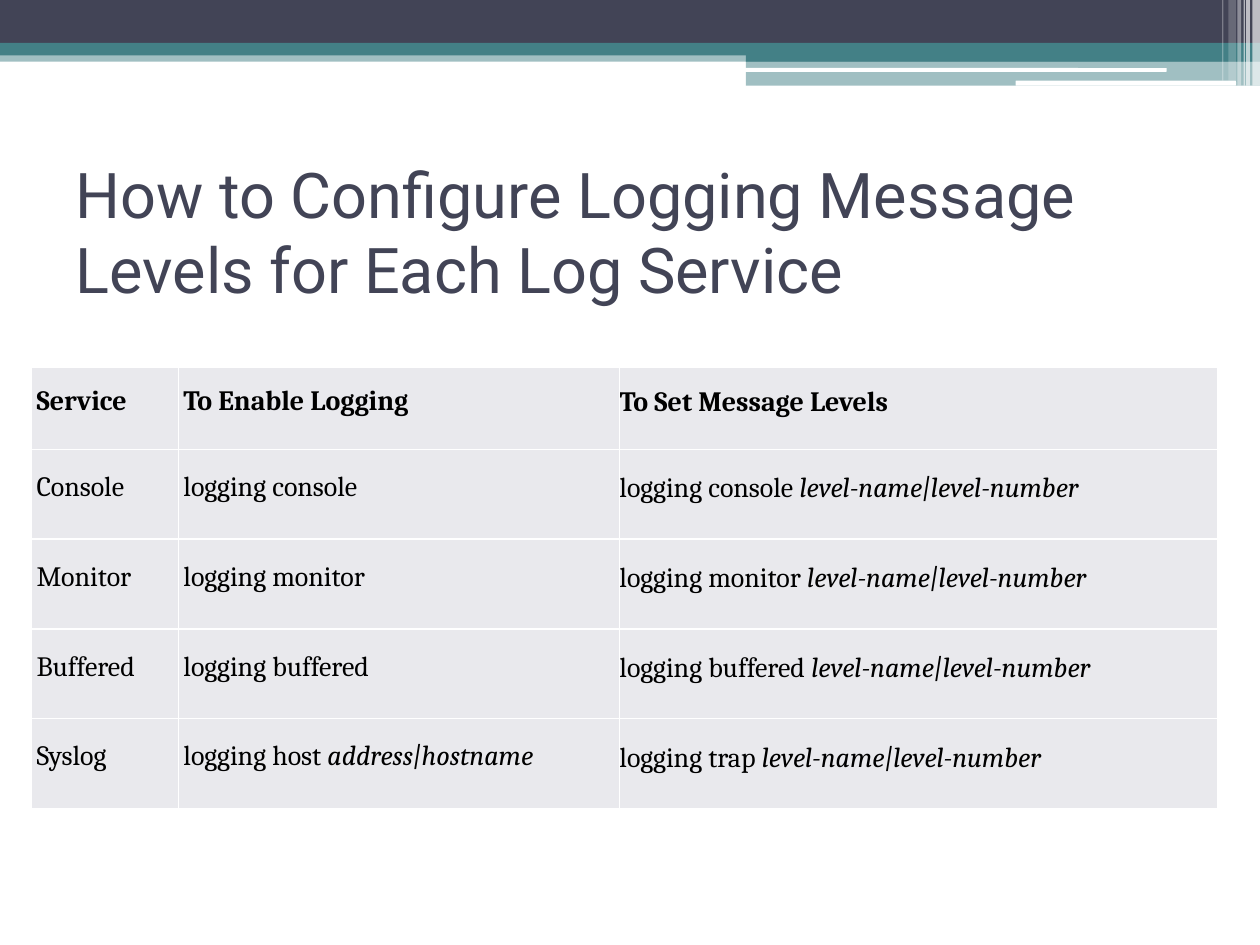
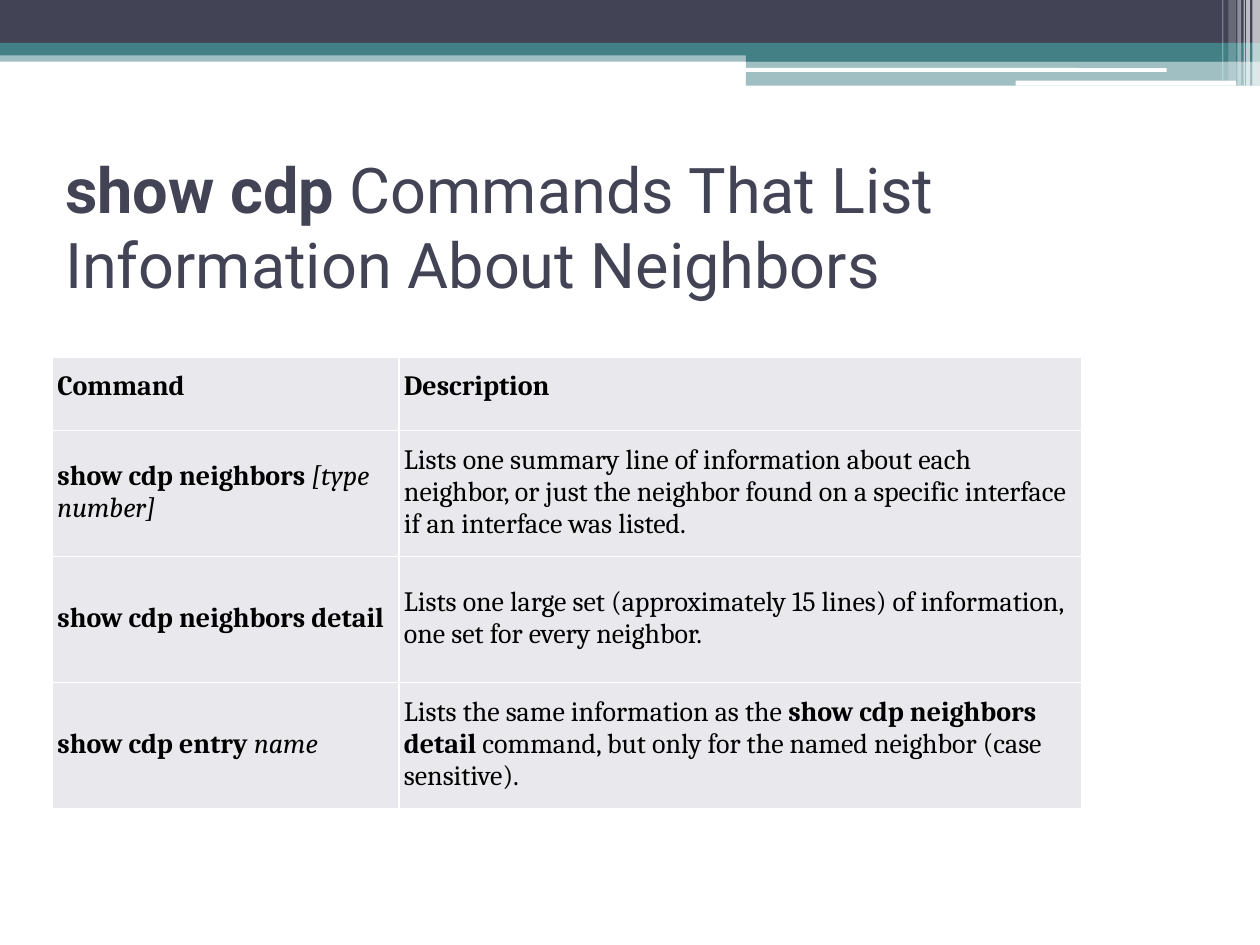
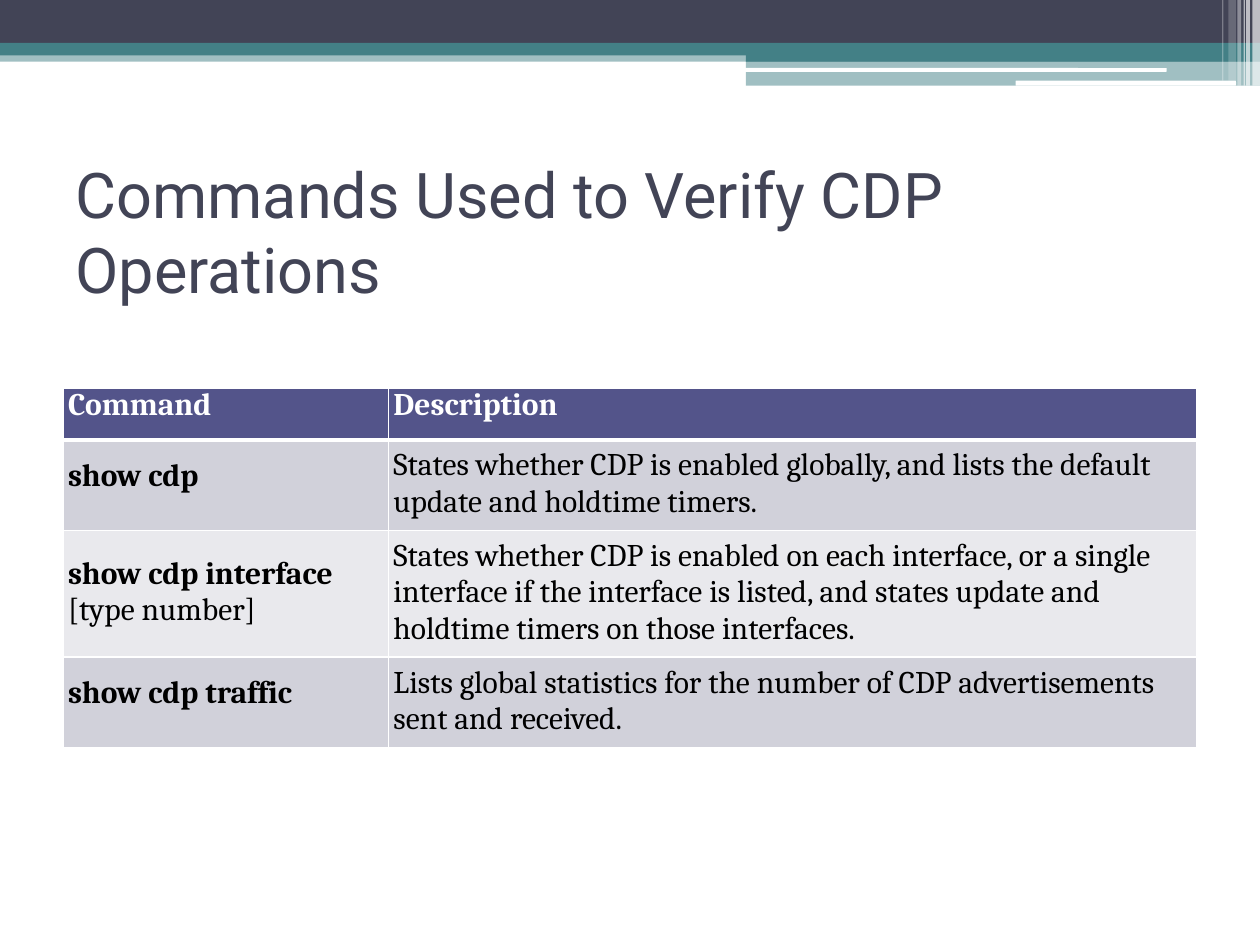
from itertools import product

from lxml import etree
from pptx import Presentation
from pptx import util as u
from pptx.dml.color import RGBColor
from pptx.enum import shapes, text
from pptx.oxml.ns import qn

COLORS = {
    "ink": "424456",
    "teal": "438086",
    "white": "FFFFFF",
    "black": "000000",
    "header": "53548A",
    "light": "E9E9ED",
    "dark": "D1D1DA",
}
GRID = u.Inches(1) / 12

RECT = shapes.MSO_SHAPE.RECTANGLE
ROUND = shapes.MSO_SHAPE.ROUNDED_RECTANGLE
BANDS = [
    (RECT, 0, 0.4, 10, 0.09, "teal", 50),
    (RECT, 0, 0, 10, 0.34, "ink", 100),
    (RECT, 0, 0.34, 10, 0.1, "teal", 100),
    (RECT, 5.92, 0.39, 4.08, 0.1, "teal", 100),
    (RECT, 5.92, 0.48, 4.08, 0.2, "teal", 50),
    (ROUND, 5.91, 0.54, 3.35, 0.03, "white", 100),
    (ROUND, 8.06, 0.64, 1.75, 0.04, "white", 100),
]
STRIPES = [
    (9.94, 0.06, 0.68, 65),
    (9.89, 0.03, 0.68, 65),
    (9.87, 0.01, 0.68, 60),
    (9.82, 0.03, 0.68, 40),
    (9.75, 0.06, 0.64, 20),
    (9.7, 0.01, 0.64, 30),
]


def rgb(name):
    return RGBColor.from_string(COLORS[name])


def cells(n):
    return u.Emu(round(n * GRID))


def bold(words):
    return words, "b"


def italic(words):
    return words, "i"


def add_band(s, kind, left, top, width, height, color, alpha):
    sp = s.shapes.add_shape(kind, *map(u.Inches, (left, top, width, height)))
    sp.shadow.inherit = False
    sp.fill.solid()
    sp.fill.fore_color.rgb = rgb(color)
    sp.line.fill.background()
    if alpha < 100:
        clr = sp.element.spPr.find(qn("a:solidFill"))[0]
        etree.SubElement(clr, qn("a:alpha")).set("val", str(alpha * 1000))
    return sp


def decorate_master(prs, s):
    stripes = [(RECT, x, 0, w, h, "white", a) for x, w, h, a in STRIPES]
    tree = prs.slide_master.shapes.element
    for i, band in enumerate(BANDS + stripes):
        sp = add_band(s, *band)
        sp.element.nvSpPr.cNvPr.set("id", str(100 + i))
        tree.insert(2 + i, sp.element)


def write_runs(p, runs, size, font, color):
    p.font.size = u.Pt(size)
    p.font.name = font
    p.font.color.rgb = rgb(color)
    parts = [(part, "") if isinstance(part, str) else part for part in runs]
    styles = {style for _, style in parts}
    for words, style in parts:
        r = p.add_run()
        r.text = words
        target = p.font if len(styles) == 1 else r.font
        target.bold = style == "b"
        target.italic = style == "i"


def add_title(s, box, *runs):
    title = s.shapes.title
    title.left, title.top, title.width, title.height = map(cells, box)
    tf = title.text_frame
    tf.auto_size = text.MSO_AUTO_SIZE.NONE
    tf.vertical_anchor = text.MSO_ANCHOR.MIDDLE
    p = tf.paragraphs[0]
    p.alignment = text.PP_ALIGN.LEFT
    write_runs(p, runs, 36, "Roboto", "ink")


def set_borders(cell, bottom):
    tcPr = cell._tc.get_or_add_tcPr()
    for side, width in (("L", 1), ("R", 1), ("T", 1), ("B", bottom)):
        ln = etree.SubElement(tcPr, qn("a:ln" + side), w=str(u.Pt(width)))
        fill = etree.SubElement(ln, qn("a:solidFill"))
        etree.SubElement(fill, qn("a:srgbClr"), val=COLORS["white"])


def add_grid(s, corner, widths, heights, rows, size=16, tight=(), flush=None, banded=False):
    left, top = map(cells, corner)
    frame = s.shapes.add_table(len(rows), len(widths), left, top,
                               cells(sum(widths)), cells(sum(heights)))
    table = frame.table
    table.first_row = banded
    table.horz_banding = False
    for column, width in zip(table.columns, widths):
        column.width = cells(width)
    for row, height in zip(table.rows, heights):
        row.height = cells(height)
    for i, j in product(range(len(rows)), range(len(widths))):
        cell = table.cell(i, j)
        head = i == 0
        set_borders(cell, 3 if banded and head else 1)
        fill = "light"
        if banded:
            fill = "header" if head else ("light", "dark")[i % 2]
        cell.fill.solid()
        cell.fill.fore_color.rgb = rgb(fill)
        cell.vertical_anchor = text.MSO_ANCHOR.MIDDLE
        margins = (0,) * 4 if j == flush else (0.04, 0.06, 0.04, 0.07 if head else 0.08)
        (cell.margin_left, cell.margin_top,
         cell.margin_right, cell.margin_bottom) = map(u.Inches, margins)
        p = cell.text_frame.paragraphs[0]
        p.space_before = u.Pt(2 if head else 3)
        p.space_after = u.Pt(2 if head else 6 if j == flush else 0)
        if head:
            p.line_spacing = u.Pt(11)
        elif (i, j) in tight:
            p.line_spacing = u.Pt(12)
        runs = [bold(rows[i][j])] if head else rows[i][j]
        write_runs(p, runs, size, "Cambria", "white" if banded and head else "black")


def add_logging_slide(s):
    add_title(s, (6, 15, 108, 14),
              "How to Configure Logging Message Levels for Each Log Service")
    level = italic("level-name|level-number")
    rows = [("Service", "To Enable Logging", "To Set Message Levels")]
    for service in ("Console", "Monitor", "Buffered"):
        command = "logging " + service.lower()
        rows.append(([service], [command], [command + " ", level]))
    rows.append((["Syslog"], ["logging host ", italic("address|hostname")],
                 ["logging trap ", level]))
    add_grid(s, (3, 35), (14, 42, 57), [7.8] + [8.55] * 4, rows,
             tight=set(product(range(1, 5), range(3))), flush=2)


def add_neighbors_slide(s):
    add_title(s, (5, 13, 96, 17), bold("show cdp"),
              " Commands That List Information About Neighbors")
    rows = [
        ("Command", "Description"),
        ([bold("show cdp neighbors "), italic("[type number]")],
         ["Lists one summary line of information about each neighbor, or just the "
          "neighbor found on a specific interface if an interface was listed."]),
        ([bold("show cdp neighbors detail")],
         ["Lists one large set (approximately 15 lines) of information, "
          "one set for every neighbor."]),
        ([bold("show cdp entry "), italic("name")],
         ["Lists the same information as the ", bold("show cdp neighbors detail"),
          " command, but only for the named neighbor (case sensitive)."]),
    ]
    add_grid(s, (5, 34), (33, 65), [7] + [12] * 3, rows)


def add_verify_slide(s):
    add_title(s, (6, 15, 108, 14), "Commands Used to Verify CDP Operations")
    rows = [
        ("Command", "Description"),
        ([bold("show cdp")],
         ["States whether CDP is enabled globally, and lists the default "
          "update and holdtime timers."]),
        ([bold("show cdp interface "), "[type number]"],
         ["States whether CDP is enabled on each interface, or a single interface "
          "if the interface is listed, and states update and holdtime timers "
          "on those interfaces."]),
        ([bold("show cdp traffic")],
         ["Lists global statistics for the number of CDP advertisements "
          "sent and received."]),
    ]
    add_grid(s, (6, 37), (31, 77), (4.9, 8.55, 12, 8.55), rows, size=18,
             tight={(1, 0), (3, 0)}, banded=True)


def main():
    prs = Presentation()
    prs.slide_width, prs.slide_height = u.Inches(10), u.Inches(7.5)
    builders = (add_logging_slide, add_neighbors_slide, add_verify_slide)
    slides = [prs.slides.add_slide(prs.slide_layouts[5]) for _ in builders]
    decorate_master(prs, slides[0])
    for build, s in zip(builders, slides):
        build(s)
    prs.save("out.pptx")


if __name__ == "__main__":
    main()
